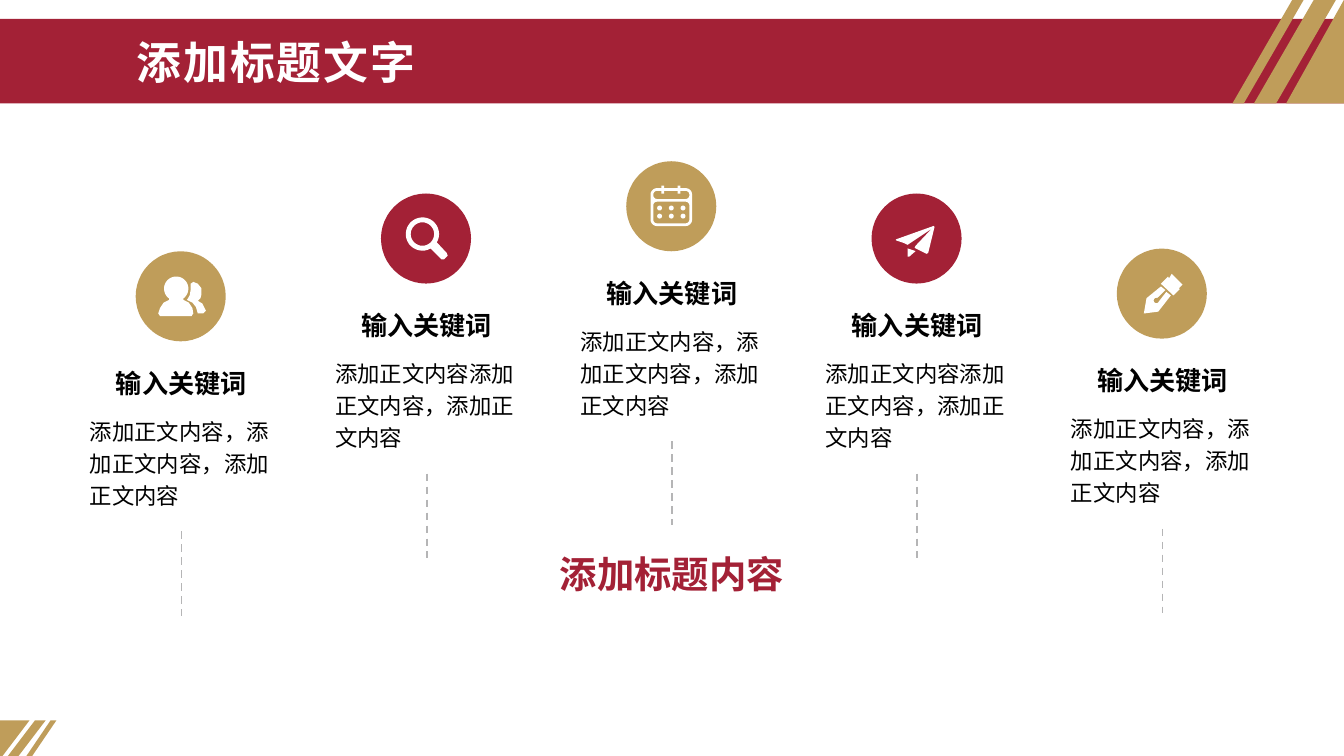
from dataclasses import dataclass
from math import cos, radians, sin

from lxml.etree import SubElement
from pptx import Presentation
from pptx.dml.color import RGBColor
from pptx.enum.dml import MSO_LINE
from pptx.enum.shapes import MSO_CONNECTOR, MSO_SHAPE as Preset
from pptx.enum.text import MSO_ANCHOR as Anchor, MSO_AUTO_SIZE as AutoSize, PP_ALIGN as Align
from pptx.oxml.ns import qn
from pptx.util import Inches, Pt

CELL = Inches(0.01)
COLUMNS, ROWS = 1000, 562.5


@dataclass(frozen=True)
class Theme:
    """Colours, font and type sizes of the slide."""
    red: str = "A32136"
    gold: str = "BF9D5A"
    grey: str = "B5B5B6"
    black: str = "000000"
    white: str = "FFFFFF"
    font: str = "Noto Sans CJK SC"
    title: int = 24
    subtitle: int = 20
    keyword: int = 14
    body: int = 12


@dataclass(frozen=True)
class Box:
    """A region measured in grid cells."""
    left: float
    top: float
    width: float
    height: float

    def inner(self, left, top, width, height):
        """Return a box placed relative to this one."""
        return Box(self.left + left, self.top + top, width, height)

    def lengths(self):
        """Return left, top, width and height as slide lengths."""
        return [round(n * CELL) for n in (self.left, self.top, self.width, self.height)]


THEME = Theme()


def paint(shape, color):
    """Give a shape a plain fill with no line or shadow."""
    shape.shadow.inherit = False
    shape.fill.solid()
    shape.fill.fore_color.rgb = RGBColor.from_string(color)
    shape.line.fill.background()


def add_preset(shapes, preset, box, color, slant=None, flip=None):
    """Add a filled preset shape, optionally slanted or flipped."""
    shape = shapes.add_shape(preset, *box.lengths())
    paint(shape, color)
    if slant is not None:
        shape.adjustments[0] = slant
    if flip:
        shape.element.spPr.xfrm.set(flip, "1")


def add_text(slide, box, text, size, color, bold=False, align=Align.LEFT,
             anchor=Anchor.TOP, wrap=True, line_spacing=None, tracking=None):
    """Add a text box that holds one run."""
    frame = slide.shapes.add_textbox(*box.lengths()).text_frame
    frame.word_wrap = wrap
    frame.auto_size = AutoSize.SHAPE_TO_FIT_TEXT
    frame.vertical_anchor = anchor
    paragraph = frame.paragraphs[0]
    paragraph.alignment = align
    if line_spacing:
        paragraph.line_spacing = line_spacing
    run = paragraph.add_run()
    run.text = text
    run.font.size = Pt(size)
    run.font.bold = bold
    run.font.color.rgb = RGBColor.from_string(color)
    run.font.name = THEME.font
    properties = run.font._element
    SubElement(properties, qn("a:ea")).set("typeface", THEME.font)
    if tracking:
        properties.set("spc", str(tracking * 100))


def arc(x, y, radius, start=0, end=360, steps=32):
    """Return points along a circular arc, angles in degrees."""
    angles = [radians(start + (end - start) * i / steps) for i in range(steps + 1)]
    return [(x + radius * cos(a), y + radius * sin(a)) for a in angles]


def rectangle(left, top, right, bottom, corner=0):
    """Return the outline of a rectangle with rounded corners."""
    if not corner:
        return [(left, top), (right, top), (right, bottom), (left, bottom)]
    centers = [(right - corner, bottom - corner), (left + corner, bottom - corner),
               (left + corner, top + corner), (right - corner, top + corner)]
    return [point for i, (x, y) in enumerate(centers)
            for point in arc(x, y, corner, 90 * i, 90 * i + 90, 8)]


def people():
    """Return the outlines of two people on a disc of 100 units."""
    front = [(27, 72), (25, 69), (27, 63), (31, 57), (37, 54), *arc(45, 41.5, 13.5, 125, 415),
             (53, 54), (59, 57), (63, 63), (64, 69), (62, 72)]
    back = [(61, 36), (64, 34), (69, 36), (73, 41), (73, 48), (72, 52), (69, 55), (74, 58),
            (78, 66), (75, 69), (69, 69), (67, 62), (63, 57), (57, 54), (60, 49), (61, 43)]
    return [front, back]


def magnifier():
    """Return the outlines of a magnifier on a disc of 100 units."""
    handle = [(73, 66), (74, 69), (70, 73), (67, 73), (55, 61)]
    return [arc(46, 45, 18.5, 60, 390) + handle, arc(46, 45, 13)]


def calendar():
    """Return the outlines of a calendar on a disc of 100 units."""
    page = [rectangle(27, 30, 73, 72, 7), rectangle(30, 33, 70, 42, 4),
            rectangle(30, 45, 70, 69, 4)]
    rings = [rectangle(x, y, x + 3, y + 3) for x in (39, 57) for y in (27, 33)]
    dots = [arc(x, y, 2.7) for x in (37, 50, 63) for y in (52, 61)]
    return page + rings + dots


def plane():
    """Return the outlines of a paper plane on a disc of 100 units."""
    tail = [(40, 61), (49, 64), (42, 70), (40, 70)]
    wings = [(69, 36), (27, 51), (27, 52), (36, 55), (40, 57), (67, 39), (49, 58),
             (48, 60), (49, 61), (61, 67), (63, 66), (70, 37)]
    return [tail, wings]


def pen():
    """Return the outlines of a fountain pen on a disc of 100 units."""
    nib = [(46, 70), (30, 72), (33, 55), (49, 42), (54, 46), *arc(44, 57.5, 3, -70, -340),
           (55, 48), (60, 52)]
    cap = [(58, 33), (57, 31), (49, 39), (63, 52), (70, 45), (69, 44), (73, 40), (61, 28)]
    return [nib, cap]


def add_badge(slide, box, color, outlines):
    """Group a coloured disc with its white icon."""
    shapes = slide.shapes.add_group_shape().shapes
    add_preset(shapes, Preset.OVAL, box, color)
    left, top, width, _ = box.lengths()
    contours = [[(x * 10, y * 10) for x, y in outline] for outline in outlines]
    builder = shapes.build_freeform(*contours[0][0], scale=width / 1000)
    builder.add_line_segments(contours[0][1:])
    for contour in contours[1:]:
        builder.move_to(*contour[0])
        builder.add_line_segments(contour[1:])
    paint(builder.convert_to_shape(left, top), THEME.white)


def add_dashed_line(slide, box):
    """Add a dashed grey line down the left edge of a box."""
    left, top, _, height = box.lengths()
    line = slide.shapes.add_connector(MSO_CONNECTOR.STRAIGHT, left, top, left, top + height)
    line.line.color.rgb = RGBColor.from_string(THEME.grey)
    line.line.width = Pt(1)
    line.line.dash_style = MSO_LINE.DASH
    SubElement(line.element.spPr, qn("a:effectLst"))


def add_header(slide, box):
    """Draw the title band with its slanted stripes."""
    add_preset(slide.shapes, Preset.RECTANGLE, box.inner(0, 14, box.width, 63), THEME.red)
    add_preset(slide.shapes, Preset.RIGHT_TRIANGLE, box.inner(957, 0, 43, 77), THEME.gold,
               flip="flipH")
    for left, width, slant in ((933, 61, 0.73), (917, 53, 0.84)):
        add_preset(slide.shapes, Preset.PARALLELOGRAM, box.inner(left, 0, width, 77),
                   THEME.gold, slant)
    add_text(slide, box.inner(92, 21, 777, 50), "添加标题文字", THEME.title, THEME.white,
             bold=True, anchor=Anchor.MIDDLE, tracking=1)


def add_corner(slide, box):
    """Draw the slanted stripes of the bottom corner."""
    add_preset(slide.shapes, Preset.RIGHT_TRIANGLE, box.inner(0, 0, 22, box.height),
               THEME.gold, flip="flipV")
    for left, width, slant in ((4, 30, 0.76), (18, 24, 0.82)):
        add_preset(slide.shapes, Preset.PARALLELOGRAM, box.inner(left, 0, width, box.height),
                   THEME.gold, slant)


def add_item(slide, box, color, outlines, body):
    """Stack a badge, keyword, body text and dashed line."""
    add_badge(slide, box.inner(44, 0, 67, 67), color, outlines)
    add_text(slide, box.inner(19, 81.5, 118, 34), "输入关键词", THEME.keyword, THEME.black,
             bold=True, align=Align.CENTER, wrap=False)
    add_text(slide, box.inner(0, 115, box.width, 81), body, THEME.body, THEME.black,
             line_spacing=1.2)
    add_dashed_line(slide, box.inner(box.width / 2, 208.5, 0, 62.5))


def main():
    """Build the slide and save it."""
    presentation = Presentation()
    presentation.slide_width = round(COLUMNS * CELL)
    presentation.slide_height = round(ROWS * CELL)
    slide = presentation.slides.add_slide(presentation.slide_layouts[6])
    add_header(slide, Box(0, 0, COLUMNS, 77))
    add_corner(slide, Box(0, 536, 42, 29))
    add_text(slide, Box(389, 405, 222, 44), "添加标题内容", THEME.subtitle, THEME.red,
             bold=True, align=Align.CENTER, anchor=Anchor.MIDDLE)
    comma_body = "添加正文内容，添加正文内容，添加正文内容"
    joined_body = "添加正文内容添加正文内容，添加正文内容"
    items = ((187, people), (144, magnifier), (120, calendar), (144, plane), (185, pen))
    for i, (top, icon) in enumerate(items):
        color, body = (THEME.red, joined_body) if i % 2 else (THEME.gold, comma_body)
        add_item(slide, Box(57 + 182.5 * i, top, 156, 271), color, icon(), body)
    presentation.save("out.pptx")


if __name__ == "__main__":
    main()
